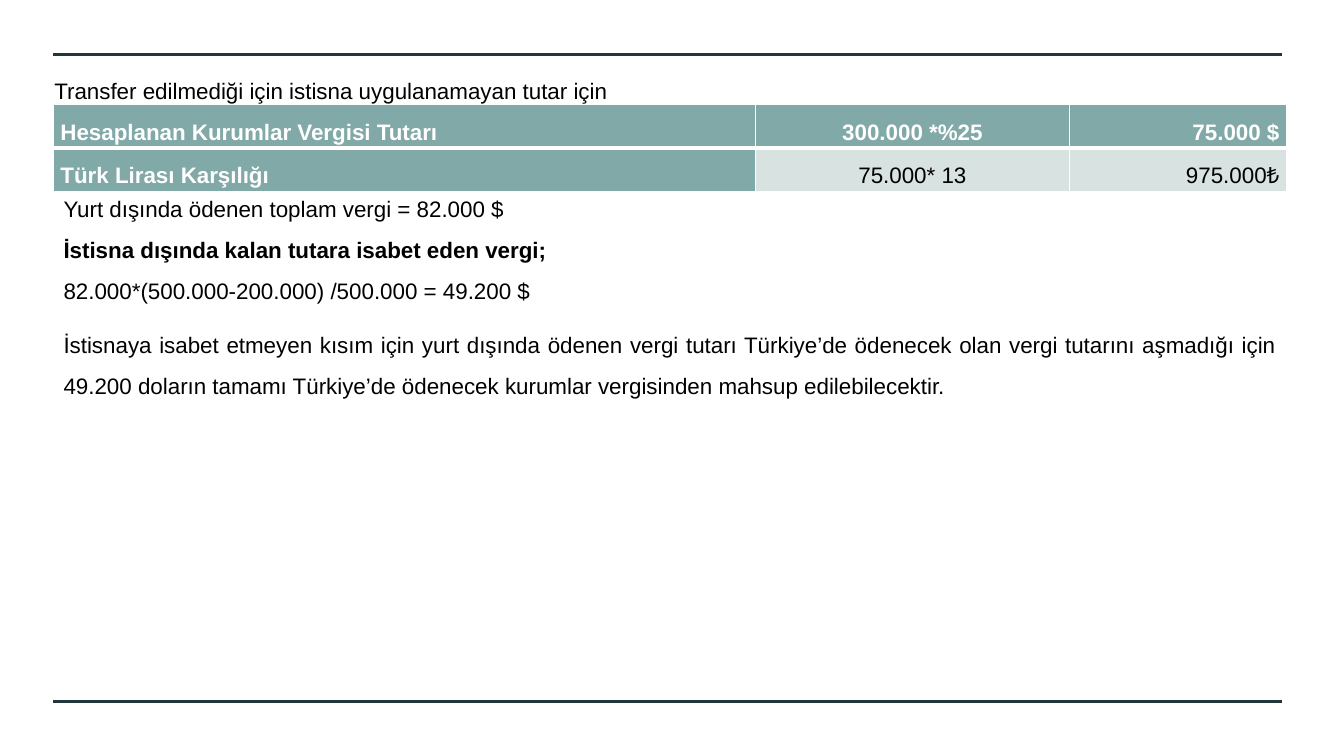
from lxml.etree import SubElement
from pptx import Presentation
from pptx.dml.color import RGBColor
from pptx.enum.shapes import MSO_CONNECTOR
from pptx.enum.text import MSO_ANCHOR, MSO_AUTO_SIZE, PP_ALIGN
from pptx.oxml.ns import qn
from pptx.util import Pt

PX = 9144  # 100 px to the inch
DARK = RGBColor(0x21, 0x37, 0x3A)
TEAL = RGBColor(0x80, 0xA9, 0xA7)
PALE = RGBColor(0xD8, 0xE2, 0xE1)
WHITE = RGBColor(0xFF, 0xFF, 0xFF)
BLACK = RGBColor(0, 0, 0)


def style(para, align, color=BLACK, bold=False):
    para.alignment = align
    font = para.font
    font.name, font.size, font.bold = "Arial", Pt(16), bold
    font.color.rgb = color


def border(cell, side, width):
    line = SubElement(cell._tc.get_or_add_tcPr(), qn(f"a:ln{side}"), w=str(Pt(width)))
    fill = SubElement(line, qn("a:solidFill"))
    SubElement(fill, qn("a:srgbClr"), val=str(WHITE))


prs = Presentation()
prs.slide_width, prs.slide_height = 1333 * PX, 750 * PX
slide = prs.slides.add_slide(prs.slide_layouts[1])
shapes = slide.shapes
title = shapes.title.element
title.getparent().remove(title)

# Rules at top and bottom
for y in (54, 696):
    rule = shapes.add_connector(MSO_CONNECTOR.STRAIGHT, 53 * PX, y * PX, 1272 * PX, y * PX)
    rule.line.color.rgb = DARK
    rule.line.width = Pt(2.25)
    SubElement(rule.element.spPr, qn("a:effectLst"))

# Body text
NOTES = [
    ("Yurt dışında ödenen toplam vergi = 82.000 $", False, None),
    ("İstisna dışında kalan tutara isabet eden vergi;", True, None),
    ("82.000*(500.000-200.000) /500.000 = 49.200 $", False, None),
    ("İstisnaya isabet etmeyen kısım için yurt dışında ödenen vergi tutarı "
     "Türkiye’de ödenecek olan vergi tutarını aşmadığı için 49.200 doların tamamı "
     "Türkiye’de ödenecek kurumlar vergisinden mahsup edilebilecektir.", False, 1.5),
]
body = slide.placeholders[1]
body.left, body.top, body.width, body.height = 53 * PX, 189 * PX, 1223 * PX, 497 * PX
frame = body.text_frame
frame.text = "\n".join(text for text, bold, space in NOTES)
for para, (text, bold, space) in zip(frame.paragraphs, NOTES):
    style(para, PP_ALIGN.JUSTIFY, bold=bold)
    para.space_before = Pt(10)
    para.line_spacing = space
    props = para._p.get_or_add_pPr()
    props.set("marL", "0")
    props.set("indent", "0")
    SubElement(props, qn("a:buNone"))
    props.append(props.find(qn("a:defRPr")))

# Tax table
ROWS = [
    ("Hesaplanan Kurumlar Vergisi Tutarı", "300.000 *%25", "75.000 $"),
    ("Türk Lirası Karşılığı", "75.000* 13", "975.000₺"),
]
ALIGNS = (PP_ALIGN.LEFT, PP_ALIGN.CENTER, PP_ALIGN.RIGHT)
table = shapes.add_table(2, 3, 53 * PX, 104 * PX, 1223 * PX, 86 * PX).table
for col, width in zip(table.columns, (696, 312, 215)):
    col.width = width * PX
for r, row in enumerate(ROWS):
    table.rows[r].height = 43 * PX
    for c, text in enumerate(row):
        cell = table.cell(r, c)
        head = r == 0 or c == 0
        cell.text = text
        cell.vertical_anchor = MSO_ANCHOR.MIDDLE
        cell.margin_left = cell.margin_right = 7 * PX
        cell.margin_top = cell.margin_bottom = 0
        para = cell.text_frame.paragraphs[0]
        style(para, ALIGNS[c], WHITE if head else BLACK, head)
        para.line_spacing = 1.5
        for side in "LRTB":
            shared = (r, side) in ((0, "B"), (1, "T"))
            border(cell, side, 3 if shared else 1)
        cell.fill.solid()
        cell.fill.fore_color.rgb = TEAL if head else PALE

# Caption above the table
box = shapes.add_textbox(44 * PX, 58 * PX, 581 * PX, 45 * PX)
frame = box.text_frame
frame.word_wrap = False
frame.auto_size = MSO_AUTO_SIZE.SHAPE_TO_FIT_TEXT
para = frame.paragraphs[0]
para.text = "Transfer edilmediği için istisna uygulanamayan tutar için"
style(para, PP_ALIGN.JUSTIFY)
para.line_spacing = 1.5

prs.save("out.pptx")
